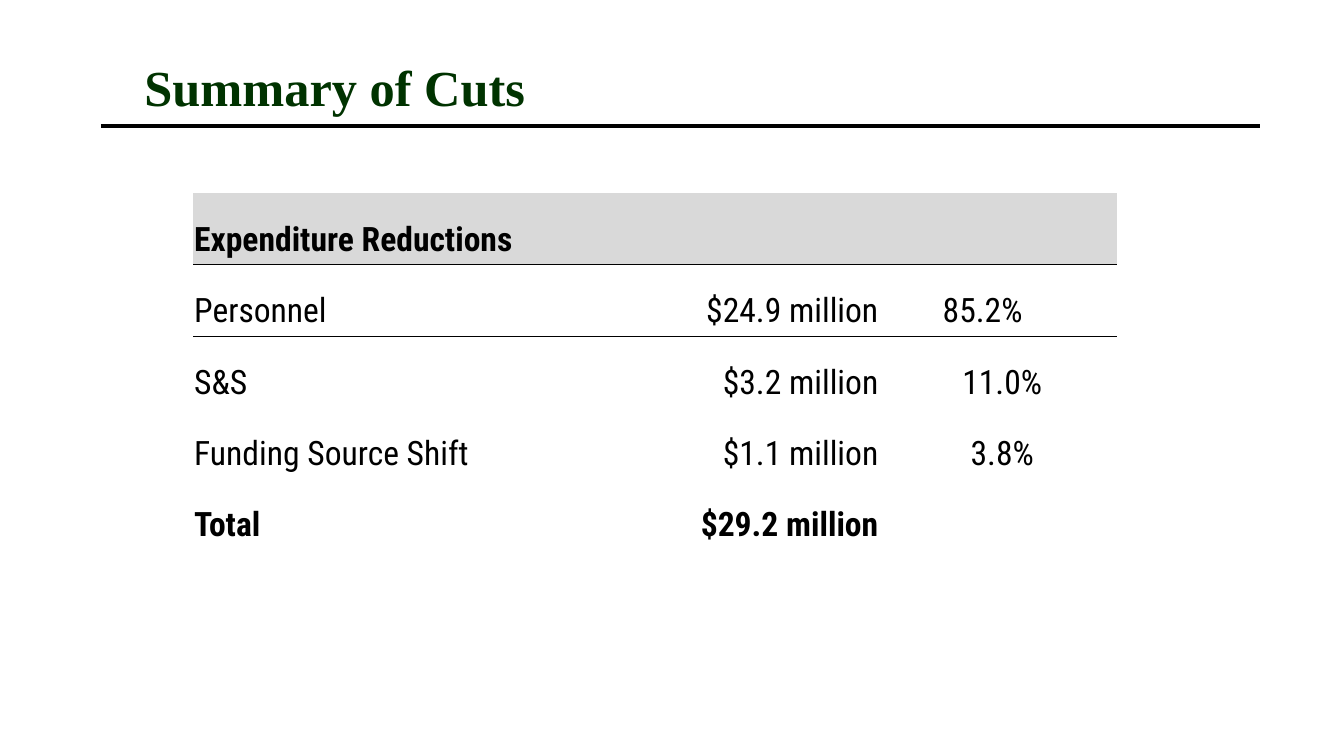
from lxml import etree
from pptx import Presentation
from pptx.dml.color import RGBColor
from pptx.enum.shapes import MSO_CONNECTOR
from pptx.enum.text import MSO_ANCHOR, PP_ALIGN
from pptx.oxml.ns import qn
from pptx.util import Inches, Pt

STRAIGHT = MSO_CONNECTOR.STRAIGHT
MIDDLE, BOTTOM = MSO_ANCHOR.MIDDLE, MSO_ANCHOR.BOTTOM
LEFT, CENTER, RIGHT = PP_ALIGN.LEFT, PP_ALIGN.CENTER, PP_ALIGN.RIGHT

# The slide is a grid of 160 columns by 90 rows of equal squares
UNIT = Inches(1 / 12)
PLAIN_TABLE_STYLE = "{2D5ABB26-0587-4C30-8999-92F81FD0307C}"

TITLE_FONT = {"name": "Times New Roman", "size": Pt(36), "bold": True}
BODY_FONT = {"name": "Roboto Condensed", "size": Pt(24), "bold": False}
BOLD_FONT = {**BODY_FONT, "bold": True}

ROWS = [
    ("Expenditure Reductions", "", ""),
    ("Personnel", "$24.9 million", "85.2%"),
    ("S&S", "$3.2 million", "11.0%"),
    ("Funding Source Shift", "$1.1 million", "3.8%"),
    ("Total", "$29.2 million", ""),
]
COLUMN_WIDTHS = (55.3, 27.35, 27.35)
COLUMN_ALIGNMENTS = (LEFT, RIGHT, CENTER)
COLUMN_RIGHT_MARGINS = (0.01, 0.09, 0.01)
SHIFTED_PERCENT_MARGIN = 0.4
ROW_HEIGHT = 8.5


def color(hex_string):
    return RGBColor.from_string(hex_string)


def grid(count):
    return round(count * UNIT)


def set_attributes(target, values):
    for name, value in values.items():
        setattr(target, name, value)


class SlideBuilder:
    def __init__(self, presentation):
        self.slide = presentation.slides.add_slide(presentation.slide_layouts[6])
        self.ink = "000000"
        self.title_ink = "003300"
        self.header_fill = "D9D9D9"

    def add_text(self, paragraph, text, font, ink, alignment=LEFT):
        paragraph.alignment = alignment
        run = paragraph.add_run()
        run.text = text
        set_attributes(run.font, font)
        run.font.color.rgb = color(ink)

    def title(self, text, left, top, width, height):
        shape = self.slide.shapes.add_textbox(*map(grid, (left, top, width, height)))
        frame = shape.text_frame
        set_attributes(frame, {"word_wrap": True, "vertical_anchor": MIDDLE})
        self.add_text(frame.paragraphs[0], text, TITLE_FONT, self.title_ink)

    def rule(self, left, right, top):
        connector = self.slide.shapes.add_connector(
            STRAIGHT, grid(left), grid(top), grid(right), grid(top))
        connector.line.width = Pt(2.25)
        connector.line.color.rgb = color(self.ink)
        properties = next(connector.element.iter(qn("p:spPr")))
        etree.SubElement(properties, qn("a:effectLst"))

    def border(self, cell, side):
        line = etree.Element(qn(f"a:{side}"), w=str(Pt(0.5)))
        fill = etree.SubElement(line, qn("a:solidFill"))
        etree.SubElement(fill, qn("a:srgbClr"), val=self.ink)
        cell._tc.get_or_add_tcPr().insert(0, line)

    def cell(self, cell, text, font, alignment, right_margin):
        set_attributes(cell, {
            "vertical_anchor": BOTTOM,
            "margin_left": Inches(0.01),
            "margin_top": Inches(0.01),
            "margin_right": Inches(right_margin),
            "margin_bottom": Inches(0.05),
        })
        if text:
            paragraph = cell.text_frame.paragraphs[0]
            self.add_text(paragraph, text, font, self.ink, alignment)

    def table(self, rows, left, top):
        frame = self.slide.shapes.add_table(
            len(rows), len(COLUMN_WIDTHS), grid(left), grid(top),
            grid(sum(COLUMN_WIDTHS)), grid(ROW_HEIGHT * len(rows)))
        table = frame.table
        set_attributes(table, {"first_row": False, "horz_banding": False})
        next(frame.element.iter(qn("a:tableStyleId"))).text = PLAIN_TABLE_STYLE
        for column, width in zip(table.columns, COLUMN_WIDTHS):
            column.width = grid(width)

        for row_index, texts in enumerate(rows):
            table.rows[row_index].height = grid(ROW_HEIGHT)
            font = BOLD_FONT if row_index in (0, len(rows) - 1) else BODY_FONT
            for column_index, text in enumerate(texts):
                cell = table.cell(row_index, column_index)
                # The first percentage sits a little left of the others
                shifted = (row_index, column_index) == (1, 2)
                margin = (SHIFTED_PERCENT_MARGIN if shifted
                          else COLUMN_RIGHT_MARGINS[column_index])
                self.cell(cell, text, font, COLUMN_ALIGNMENTS[column_index], margin)
                if row_index == 0:
                    cell.fill.solid()
                    cell.fill.fore_color.rgb = color(self.header_fill)
                    self.border(cell, "lnB")
                else:
                    cell.fill.background()
                    if row_index == 1:
                        self.border(cell, "lnT")


def main():
    presentation = Presentation()
    presentation.slide_width = grid(160)
    presentation.slide_height = grid(90)
    builder = SlideBuilder(presentation)

    # Heading with its rule
    builder.title("Summary of Cuts", 16, 3, 113, 14.6)
    builder.rule(12, 150, 15)

    # Reductions by category
    builder.table(ROWS, 23, 23)

    presentation.save("out.pptx")


if __name__ == "__main__":
    main()
